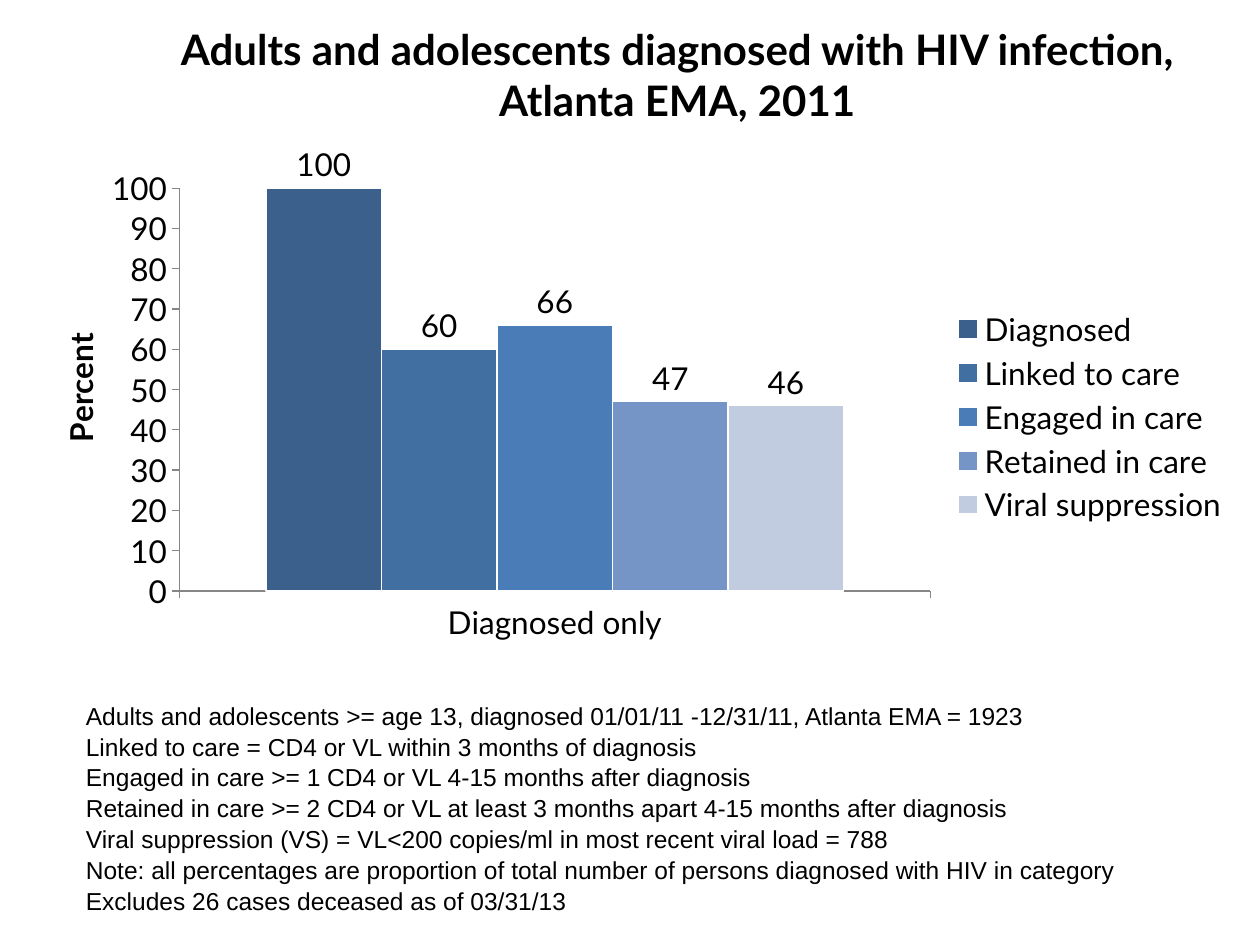
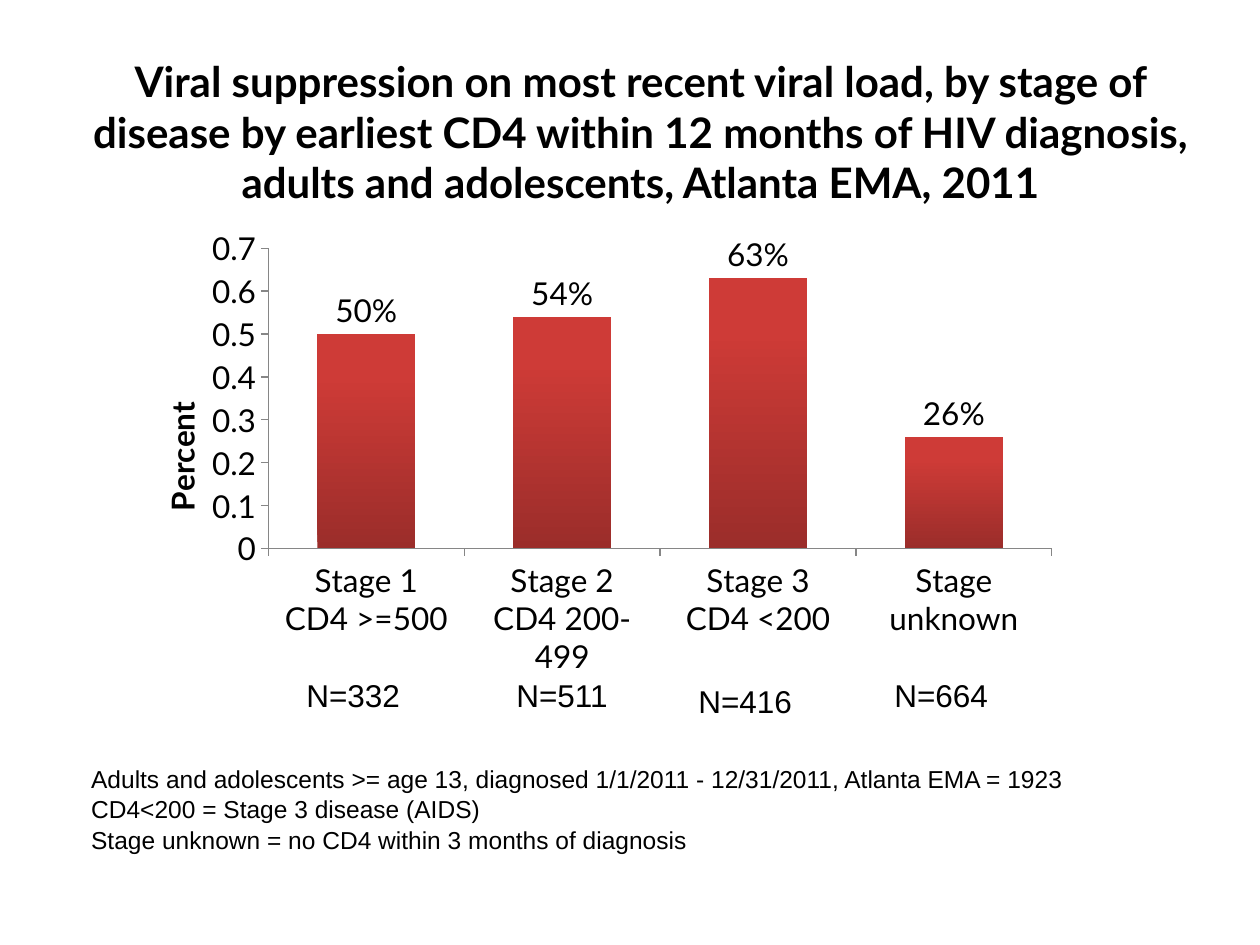
from dataclasses import dataclass

import lxml.etree
import pptx
import pptx.chart.axis
import pptx.chart.chart
import pptx.chart.data
import pptx.dml.color
import pptx.enum.chart
import pptx.enum.text
import pptx.oxml.ns
import pptx.shapes.base
import pptx.slide
import pptx.util

Pt = pptx.util.Pt
RGBColor = pptx.dml.color.RGBColor
BLACK = RGBColor(0x00, 0x00, 0x00)
WHITE = RGBColor(0xFF, 0xFF, 0xFF)
AXIS_GRAY = RGBColor(0x86, 0x86, 0x86)
DARK_RED = RGBColor(0x9B, 0x2D, 0x2A)
BRIGHT_RED = RGBColor(0xCE, 0x3B, 0x37)
CARE_BLUES = [
    RGBColor(0x3B, 0x60, 0x8B),
    RGBColor(0x42, 0x6F, 0xA2),
    RGBColor(0x4A, 0x7C, 0xB7),
    RGBColor(0x75, 0x95, 0xC6),
    RGBColor(0xC1, 0xCC, 0xE1),
]
HEADING_FONT = "Lato"
NOTE_FONT = "Arial"


@dataclass(frozen=True)
class Frame:
    left: float
    top: float
    width: float
    height: float

    def lengths(self) -> list[pptx.util.Length]:
        return [Pt(value) for value in (self.left, self.top, self.width, self.height)]


@dataclass(frozen=True)
class Note:
    frame: Frame
    lines: list[str]
    size: float = 14
    spacing: float = 1.05
    filled: bool = False


@dataclass(frozen=True)
class ColumnChart:
    frame: Frame
    categories: list[str]
    series: dict[str, list[float]]
    maximum: float
    step: float
    gap: int
    label_format: str
    plot_layout: dict[str, float]
    title_layout: dict[str, float]


CARE_CHART = ColumnChart(
    frame=Frame(23, 77.75, 685.5, 321),
    categories=["Diagnosed only"],
    series={
        "Diagnosed": [100],
        "Linked to care": [60],
        "Engaged in care": [66],
        "Retained in care": [47],
        "Viral suppression": [46],
    },
    maximum=100,
    step=10,
    gap=150,
    label_format="General",
    plot_layout={"x": 0.116, "y": 0.093, "w": 0.626, "h": 0.717},
    title_layout={"x": 0.01, "y": 0.34},
)
LEGEND_LAYOUT = {"x": 0.76, "y": 0.3, "w": 0.23, "h": 0.4}

STAGE_CHART = ColumnChart(
    frame=Frame(66, 126, 546, 264),
    categories=["Stage 1\nCD4 >=500", "Stage 2\nCD4 200-499", "Stage 3\nCD4 <200", "Stage unknown"],
    series={"Series 1": [0.5, 0.54, 0.63, 0.26]},
    maximum=0.7,
    step=0.1,
    gap=100,
    label_format="0%",
    plot_layout={"x": 0.16, "y": 0.06, "w": 0.82, "h": 0.65},
    title_layout={"x": 0.04, "y": 0.38},
)

CARE_NOTE = Note(
    Frame(42, 396, 678, 126),
    [
        "Adults and adolescents >= age 13, diagnosed 01/01/11 -12/31/11, Atlanta EMA = 1923",
        "Linked to care = CD4 or VL within 3 months of diagnosis",
        "Engaged in care >= 1 CD4 or VL 4-15 months after diagnosis",
        "Retained in care >= 2 CD4 or VL at least 3 months apart 4-15 months after diagnosis",
        "Viral suppression (VS) = VL<200 copies/ml in most recent viral load = 788",
        "Note: all percentages are proportion of total number of persons diagnosed with HIV in category",
        "Excludes 26 cases deceased as of 03/31/13",
    ],
    filled=True,
)
STAGE_NOTE = Note(
    Frame(45, 432, 695, 92),
    [
        "Adults and adolescents >= age 13, diagnosed 1/1/2011 - 12/31/2011, Atlanta EMA = 1923",
        "CD4<200 = Stage 3 disease (AIDS)",
        "Stage unknown = no CD4 within 3 months of diagnosis",
    ],
)
STAGE_COUNTS = [
    Note(Frame(left, top, 78, 29), [f"N={count}"], size=18, spacing=1)
    for left, top, count in [(168, 383, 332), (288, 383, 511), (392, 386, 416), (504, 383, 664)]
]


def place(shape: pptx.shapes.base.BaseShape, frame: Frame) -> None:
    shape.left, shape.top, shape.width, shape.height = frame.lengths()


def add_titled_page(
    deck, text: str, frame: Frame, bottom_margin: float = 3.6
) -> pptx.slide.Slide:
    page = deck.slides.add_slide(deck.slide_layouts[5])
    title = page.shapes.title
    place(title, frame)
    text_frame = title.text_frame
    text_frame.word_wrap = True
    text_frame.auto_size = pptx.enum.text.MSO_AUTO_SIZE.NONE
    text_frame.vertical_anchor = pptx.enum.text.MSO_ANCHOR.MIDDLE
    text_frame.margin_bottom = Pt(bottom_margin)
    para = text_frame.paragraphs[0]
    para.alignment = pptx.enum.text.PP_ALIGN.CENTER
    span = para.add_run()
    span.text = text
    span.font.name = HEADING_FONT
    span.font.size = Pt(24)
    span.font.bold = True
    span.font.color.rgb = BLACK
    return page


def add_note(page: pptx.slide.Slide, note: Note) -> None:
    box = page.shapes.add_textbox(*note.frame.lengths())
    if note.filled:
        box.fill.solid()
        box.fill.fore_color.rgb = WHITE
    text_frame = box.text_frame
    text_frame.word_wrap = True
    text_frame.auto_size = pptx.enum.text.MSO_AUTO_SIZE.SHAPE_TO_FIT_TEXT
    for index, line in enumerate(note.lines):
        para = text_frame.add_paragraph() if index else text_frame.paragraphs[0]
        para.line_spacing = note.spacing
        span = para.add_run()
        span.text = line
        span.font.name = NOTE_FONT
        span.font.size = Pt(note.size)
        span.font.color.rgb = BLACK


def set_layout(parent, position: int, values: dict[str, float], inner: bool = False) -> None:
    name = pptx.oxml.ns.qn
    for old_layout in parent.findall(name("c:layout")):
        parent.remove(old_layout)
    layout = lxml.etree.Element(name("c:layout"))
    manual = lxml.etree.SubElement(layout, name("c:manualLayout"))
    settings = [("layoutTarget", "inner")] if inner else []
    settings += [(f"{key}Mode", "edge") for key in values if key in "xy"]
    settings += [(key, str(value)) for key, value in values.items()]
    for tag, value in settings:
        lxml.etree.SubElement(manual, name(f"c:{tag}")).set("val", value)
    parent.insert(position, layout)


def style_axis(axis: pptx.chart.axis._BaseAxis) -> None:
    axis.has_major_gridlines = False
    axis.major_tick_mark = pptx.enum.chart.XL_TICK_MARK.OUTSIDE
    axis.minor_tick_mark = pptx.enum.chart.XL_TICK_MARK.NONE
    axis.format.line.color.rgb = AXIS_GRAY
    axis.format.line.width = Pt(0.75)


def add_column_chart(page: pptx.slide.Slide, columns: ColumnChart) -> pptx.chart.chart.Chart:
    data = pptx.chart.data.CategoryChartData()
    data.categories = columns.categories
    for name, values in columns.series.items():
        data.add_series(name, values)
    kind = pptx.enum.chart.XL_CHART_TYPE.COLUMN_CLUSTERED
    chart = page.shapes.add_chart(kind, *columns.frame.lengths(), data).chart
    chart.has_title = False
    chart.has_legend = False
    chart.font.name = HEADING_FONT
    chart.font.size = Pt(18)
    chart.font.color.rgb = BLACK

    plot = chart.plots[0]
    plot.vary_by_categories = False
    plot.gap_width = columns.gap
    plot.overlap = 0
    plot.has_data_labels = True
    labels = plot.data_labels
    labels.show_value = True
    labels.number_format = columns.label_format
    labels.number_format_is_linked = False
    labels.position = pptx.enum.chart.XL_LABEL_POSITION.OUTSIDE_END

    style_axis(chart.category_axis)
    value_axis = chart.value_axis
    style_axis(value_axis)
    value_axis.minimum_scale = 0
    value_axis.maximum_scale = columns.maximum
    value_axis.major_unit = columns.step
    value_axis.tick_labels.number_format = "General"
    value_axis.tick_labels.number_format_is_linked = False
    span = value_axis.axis_title.text_frame.paragraphs[0].add_run()
    span.text = "Percent"
    span.font.name = HEADING_FONT
    span.font.size = Pt(18)
    span.font.bold = True
    span.font.color.rgb = BLACK

    set_layout(value_axis.axis_title._element, 1, columns.title_layout)
    set_layout(chart._chartSpace.chart.plotArea, 0, columns.plot_layout, inner=True)
    return chart


def build_care_page(deck) -> None:
    page = add_titled_page(
        deck,
        "Adults and adolescents diagnosed with HIV infection, Atlanta EMA, 2011",
        Frame(72, 18, 630, 78),
        bottom_margin=33,
    )
    chart = add_column_chart(page, CARE_CHART)
    for series, blue in zip(chart.plots[0].series, CARE_BLUES):
        series.format.fill.solid()
        series.format.fill.fore_color.rgb = blue
        series.format.line.color.rgb = WHITE
        series.format.line.width = Pt(0.75)
    chart.has_legend = True
    chart.legend.position = pptx.enum.chart.XL_LEGEND_POSITION.RIGHT
    chart.legend.include_in_layout = True
    set_layout(chart.legend._element, 1, LEGEND_LAYOUT)
    add_note(page, CARE_NOTE)


def build_stage_page(deck) -> None:
    page = add_titled_page(
        deck,
        "Viral suppression on most recent viral load, by stage of disease by earliest CD4 "
        "within 12 months of HIV diagnosis, adults and adolescents, Atlanta EMA, 2011",
        Frame(30, 36, 672, 78),
    )
    chart = add_column_chart(page, STAGE_CHART)
    fill = chart.plots[0].series[0].format.fill
    fill.gradient()
    fill.gradient_angle = 90
    bottom_stop, top_stop = fill.gradient_stops
    bottom_stop.color.rgb = DARK_RED
    top_stop.color.rgb = BRIGHT_RED
    top_stop.position = 0.8
    for note in [STAGE_NOTE, *STAGE_COUNTS]:
        add_note(page, note)


def main() -> None:
    deck = pptx.Presentation()
    deck.slide_width, deck.slide_height = Pt(720), Pt(540)
    build_care_page(deck)
    build_stage_page(deck)
    deck.save("out.pptx")


if __name__ == "__main__":
    main()
